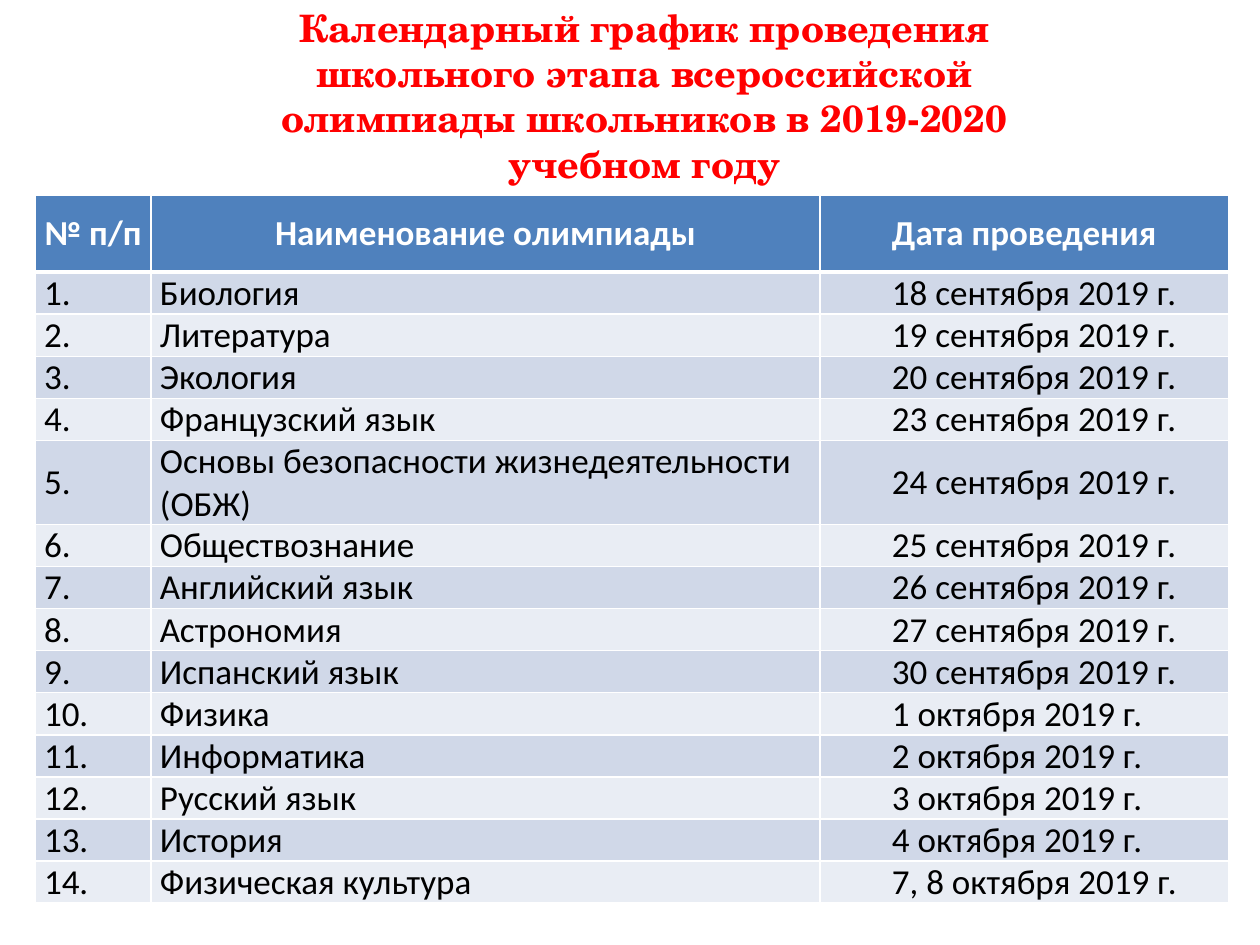
from lxml.etree import SubElement
from pptx import Presentation
from pptx.dml.color import RGBColor
from pptx.enum.text import MSO_ANCHOR as Anchor, PP_ALIGN as Align
from pptx.oxml.ns import qn
from pptx.util import Inches, Pt

RED = RGBColor(0xFF, 0x00, 0x00)
WHITE = RGBColor(0xFF, 0xFF, 0xFF)
BLACK = RGBColor(0x00, 0x00, 0x00)
HEADER_BLUE = RGBColor(0x4F, 0x81, 0xBD)
BANDS = (RGBColor(0xD0, 0xD8, 0xE8), RGBColor(0xE9, 0xED, 0xF4))

TITLE = ("Календарный график проведения школьного этапа всероссийской "
         "олимпиады школьников в 2019-2020 учебном году")
HEADER = ("№ п/п", "Наименование олимпиады", "Дата проведения")
SCHEDULE = (
    ("Биология", "18 сентября"),
    ("Литература", "19 сентября"),
    ("Экология", "20 сентября"),
    ("Французский язык", "23 сентября"),
    ("Основы безопасности жизнедеятельности (ОБЖ)", "24 сентября"),
    ("Обществознание", "25 сентября"),
    ("Английский язык", "26 сентября"),
    ("Астрономия", "27 сентября"),
    ("Испанский язык", "30 сентября"),
    ("Физика", "1 октября"),
    ("Информатика", "2 октября"),
    ("Русский язык", "3 октября"),
    ("История", "4 октября"),
    ("Физическая культура", "7, 8 октября"),
)
COLUMN_SHARES = (0.092, 0.531, 0.324)
HEADER_HEIGHT, ROW_HEIGHT, LONG_ROW_HEIGHT = 0.61, 0.31, 0.36
LONG_ROW = 5
DATE_COLUMN = 2


class SchedulePage:
    """Holds the style and the current slide; places are shares of the slide."""

    title_font, title_size = "TeX Gyre Schola", Pt(21.6)
    table_font, table_size = "Calibri", Pt(20)

    def __init__(self, presentation):
        self.width = presentation.slide_width
        self.height = presentation.slide_height
        self.slide = presentation.slides.add_slide(presentation.slide_layouts[6])

    def place(self, left, top, width, height):
        return (round(left * self.width), round(top * self.height),
                round(width * self.width), round(height * self.height))

    def style(self, paragraph, name, size, color, bold):
        font = paragraph.font
        font.name, font.size, font.bold = name, size, bold
        font.color.rgb = color

    def title(self, text, *area):
        frame = self.slide.shapes.add_textbox(*self.place(*area)).text_frame
        frame.word_wrap = True
        frame.vertical_anchor = Anchor.MIDDLE
        paragraph = frame.paragraphs[0]
        paragraph.text = text
        paragraph.alignment = Align.CENTER
        self.style(paragraph, self.title_font, self.title_size, RED, True)

    def borders(self, cell, **points):
        properties = cell._tc.get_or_add_tcPr()
        for side in ("L", "R", "T", "B"):
            line = SubElement(properties, qn(f"a:ln{side}"), w=str(Pt(points.get(side, 1))))
            fill = SubElement(line, qn("a:solidFill"))
            SubElement(fill, qn("a:srgbClr"), val=str(WHITE))

    def cell(self, cell, text, row, column):
        is_header = row == 0
        # Borders come before the fill in the cell properties
        self.borders(cell, B=3 if is_header else 1, T=3 if row == 1 else 1)
        cell.fill.solid()
        cell.fill.fore_color.rgb = HEADER_BLUE if is_header else BANDS[(row - 1) % 2]
        cell.vertical_anchor = Anchor.MIDDLE
        cell.margin_left = cell.margin_right = Inches(0.07)
        cell.margin_top = cell.margin_bottom = 0
        paragraph = cell.text_frame.paragraphs[0]
        paragraph.text = text
        if column == DATE_COLUMN:
            paragraph.level = 1
            paragraph._p.get_or_add_pPr().set("marL", str(Inches(0.5)))
        elif is_header:
            paragraph.alignment = Align.CENTER
        self.style(paragraph, self.table_font, self.table_size,
                   WHITE if is_header else BLACK, is_header)

    def table(self, rows, *area):
        frame = self.slide.shapes.add_table(
            len(rows), len(COLUMN_SHARES), *self.place(*area))
        table, frame_height = frame.table, frame.height
        for column, share in zip(table.columns, COLUMN_SHARES):
            column.width = round(share * self.width)
        special_heights = {0: HEADER_HEIGHT, LONG_ROW: LONG_ROW_HEIGHT}
        for row, texts in enumerate(rows):
            table.rows[row].height = Inches(special_heights.get(row, ROW_HEIGHT))
            for column, text in enumerate(texts):
                self.cell(table.cell(row, column), text, row, column)
        frame.height = frame_height


def main():
    presentation = Presentation()
    presentation.slide_width, presentation.slide_height = Inches(10), Inches(7.5)
    page = SchedulePage(presentation)

    # Heading
    page.title(TITLE, 0.161, 0.13 / 7.5, 0.701, 1.25 / 7.5)

    # Numbered schedule
    rows = [HEADER] + [(f"{number}.", subject, f"{date} 2019 г.")
                       for number, (subject, date) in enumerate(SCHEDULE, 1)]
    page.table(rows, 0.028, 1.55 / 7.5, sum(COLUMN_SHARES), 5.67 / 7.5)

    presentation.save("out.pptx")


if __name__ == "__main__":
    main()
